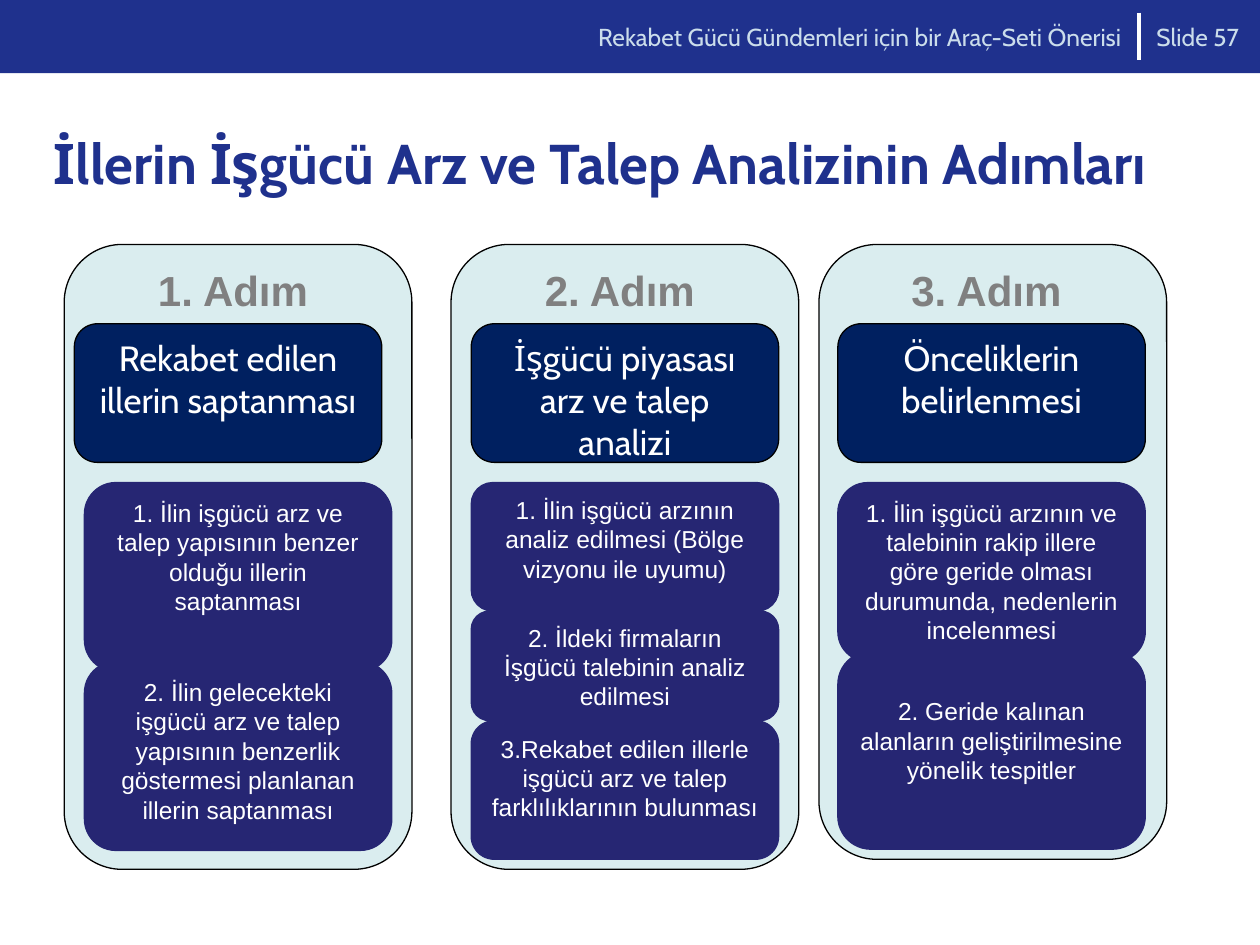
import pptx
import pptx.util
import pptx.dml.color
import pptx.enum.shapes
import pptx.enum.text
from lxml import etree

Inches = pptx.util.Inches
Pt = pptx.util.Pt
SHAPE = pptx.enum.shapes.MSO_SHAPE
ALIGN = pptx.enum.text.PP_ALIGN
ANCHOR = pptx.enum.text.MSO_ANCHOR

COLORS = {
    "band": "1F318D",
    "band_text": "CBDDEB",
    "white": "FFFFFF",
    "black": "000000",
    "panel": "DAEDEF",
    "step": "808080",
    "heading": "002060",
    "task": "262673",
}

STEPS = [
    {
        "box": (0.51, 1.94, 2.76, 4.96),
        "label_left": 0.75,
        "heading_left": 0.59,
        "task_left": 0.67,
        "heading": "Rekabet edilen illerin saptanması",
        "tasks": [
            (3.83, 1.5, "1. İlin işgücü arz ve talep yapısının benzer olduğu illerin saptanması", {}),
            (5.25, 1.5, "2. İlin gelecekteki işgücü arz ve talep yapısının benzerlik "
                        "göstermesi planlanan illerin saptanması", {}),
        ],
    },
    {
        "box": (3.58, 1.94, 2.76, 4.96),
        "label_left": 3.82,
        "heading_left": 3.74,
        "task_left": 3.74,
        "heading": "İşgücü piyasası arz ve talep analizi",
        "tasks": [
            (3.83, 1.02, "1. İlin işgücü arzının analiz edilmesi (Bölge vizyonu ile uyumu)", {}),
            (4.85, 0.87, "2. İldeki firmaların İşgücü talebinin analiz edilmesi", {}),
            (5.72, 1.1, "Rekabet edilen illerle işgücü arz ve talep farklılıklarının bulunması",
             {"number": 3}),
        ],
    },
    {
        "box": (6.5, 1.94, 2.76, 4.88),
        "label_left": 6.73,
        "heading_left": 6.65,
        "task_left": 6.65,
        "heading": "Önceliklerin belirlenmesi",
        "tasks": [
            (3.83, 1.42, "1. İlin işgücü arzının ve talebinin rakip illere göre geride olması "
                         "durumunda, nedenlerin incelenmesi", {}),
            (5.17, 1.57, "2. Geride kalınan alanların geliştirilmesine yönelik tespitler",
             {"top": 0.28}),
        ],
    },
]


def rgb(name):
    return pptx.dml.color.RGBColor.from_string(COLORS[name])


def write(sp, text, size, color, font="Cabin", bold=False, align=ALIGN.LEFT,
          anchor=ANCHOR.MIDDLE, top=0.05, number=None):
    tf = sp.text_frame
    tf.word_wrap = True
    tf.vertical_anchor = anchor
    tf.margin_top = Inches(top)
    p = tf.paragraphs[0]
    p.alignment = align
    if number:
        pPr = p._p.get_or_add_pPr()
        pPr.set("marL", "0")
        pPr.set("indent", "0")
        bullet = etree.SubElement(pPr, pptx.oxml.ns.qn("a:buAutoNum"))
        bullet.set("type", "arabicPeriod")
        bullet.set("startAt", str(number))
    r = p.add_run()
    r.text = text
    r.font.name = font
    r.font.size = Pt(size)
    r.font.bold = bold
    r.font.color.rgb = rgb(color)


def add_text(s, box, text, size, color, **style):
    sp = s.shapes.add_textbox(*map(Inches, box))
    write(sp, text, size, color, **style)


def add_box(s, box, fill=None, line=None, kind=SHAPE.ROUNDED_RECTANGLE):
    sp = s.shapes.add_shape(kind, *map(Inches, box))
    sp.shadow.inherit = False
    if fill:
        sp.fill.solid()
        sp.fill.fore_color.rgb = rgb(fill)
    else:
        sp.fill.background()
    if line:
        sp.line.color.rgb = rgb(line)
        sp.line.width = Pt(0.75)
    else:
        sp.line.fill.background()
    return sp


def add_header(s, box):
    left, top, width, height = box
    add_box(s, box, "band", kind=SHAPE.RECTANGLE)
    x = Inches(left + 9.04)
    divider = s.shapes.add_connector(pptx.enum.shapes.MSO_CONNECTOR.STRAIGHT,
                                     x, Inches(top + 0.1), x, Inches(top + height - 0.1))
    divider.line.color.rgb = rgb("white")
    divider.line.width = Pt(2.5)
    etree.SubElement(divider._element.spPr, pptx.oxml.ns.qn("a:effectLst"))
    add_text(s, (left + 2.08, top, 6.92, height),
             "Rekabet Gücü Gündemleri için bir Araç-Seti Önerisi",
             14, "band_text", align=ALIGN.RIGHT)
    add_text(s, (left + width - 0.92, top, 0.92, height), "Slide 57", 14, "band_text")


def add_step(s, box, number, step):
    top = box[1]
    centered = {"align": ALIGN.CENTER, "anchor": ANCHOR.TOP}
    add_box(s, box, "panel", "black")
    label = add_box(s, (step["label_left"], top + 0.08, 2.2, 0.55))
    write(label, f"{number}. Adım", 24, "step", font="Arial", bold=True, **centered)
    heading = add_box(s, (step["heading_left"], top + 0.63, 2.44, 1.1), "heading", "black")
    write(heading, step["heading"], 20, "white", **centered)
    for task_top, height, text, style in step["tasks"]:
        task = add_box(s, (step["task_left"], task_top, 2.44, height), "task", "task")
        write(task, text, 14, "white", font="Arial", **centered, **style)


def main():
    prs = pptx.Presentation()
    prs.slide_width = Inches(10)
    prs.slide_height = Inches(7.5)
    s = prs.slides.add_slide(prs.slide_layouts[6])
    add_header(s, (0, 0, 10, 0.58))
    add_text(s, (0.33, 0.83, 9.33, 0.92), "İllerin İşgücü Arz ve Talep Analizinin Adımları",
             32, "band", bold=True)
    for number, step in enumerate(STEPS, 1):
        add_step(s, step["box"], number, step)
    prs.save("out.pptx")


if __name__ == "__main__":
    main()
